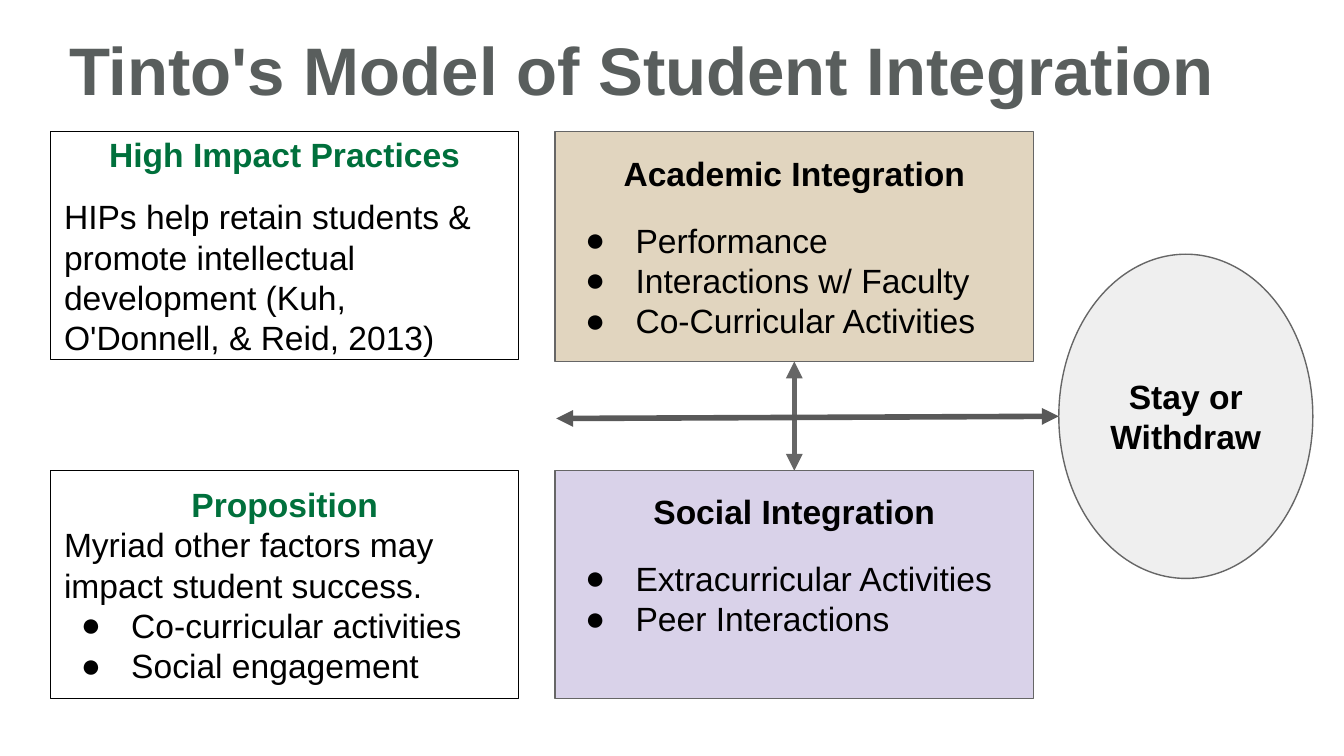
from dataclasses import dataclass
from lxml.etree import SubElement as Sub
from pptx import Presentation
from pptx.dml.color import RGBColor as Rgb
from pptx.enum.shapes import MSO_CONNECTOR as Conn, MSO_SHAPE as Kind
from pptx.enum.text import MSO_ANCHOR as Anchor, PP_ALIGN as Align
from pptx.oxml.ns import qn
from pptx.util import Pt


@dataclass(frozen=True)
class Theme:
    font: str = "Arial"
    head: int = 36
    body: int = 18
    lead: float = 1.2
    inset: float = 7.2
    thin: float = 0.75
    thick: float = 3
    title: str = "595E5D"
    green: str = "00703C"
    ink: str = "000000"
    white: str = "FFFFFF"
    tan: str = "E1D5BF"
    lilac: str = "D9D2E9"
    pale: str = "EFEFEF"
    edge: str = "666666"
    arrow: str = "595959"


T = Theme()


def frame(shape, drop=0):
    """Set wrap, anchor and insets; drop is extra room at the foot."""
    box = shape.text_frame
    box.word_wrap = True
    box.vertical_anchor = Anchor.MIDDLE
    box.margin_left = box.margin_right = box.margin_top = Pt(T.inset)
    box.margin_bottom = Pt(T.inset + drop)
    return box


def write(para, text, color=T.ink, size=T.body, bold=False,
          align=Align.LEFT, gap=0):
    para.alignment = align
    para.line_spacing = Pt(size * T.lead)
    para.space_before = Pt(gap)
    run = para.add_run()
    run.text = text
    font = run.font
    font.name, font.size, font.bold = T.font, Pt(size), bold
    font.color.rgb = Rgb.from_string(color)


def bullet(para):
    props = para._p.get_or_add_pPr()
    props.set("marL", str(Pt(36)))
    props.set("indent", str(Pt(-27)))
    Sub(props, qn("a:buFont"), typeface=T.font)
    Sub(props, qn("a:buChar"), char="●")


def block(slide, kind, box, fill, edge):
    shape = slide.shapes.add_shape(kind, *map(Pt, box))
    shape.shadow.inherit = False
    shape.fill.solid()
    shape.fill.fore_color.rgb = Rgb.from_string(fill)
    shape.line.color.rgb = Rgb.from_string(edge)
    shape.line.width = Pt(T.thin)
    return shape


def title(slide, box, text):
    shape = slide.shapes.add_textbox(*map(Pt, box))
    write(frame(shape).paragraphs[0], text, T.title, T.head, True)


def card(slide, box, fill, edge, head, color, text="", items=(),
         gap=0, drop=0):
    """Headed box with an optional passage and bullet list."""
    body = frame(block(slide, Kind.RECTANGLE, box, fill, edge), drop)
    write(body.paragraphs[0], head, color, bold=True, align=Align.CENTER)
    if text:
        write(body.add_paragraph(), text, gap=gap)
    for i, item in enumerate(items):
        para = body.add_paragraph()
        write(para, item, gap=0 if i or text else gap)
        bullet(para)


def result(slide, box, text):
    shape = block(slide, Kind.OVAL, box, T.pale, T.edge)
    write(frame(shape).paragraphs[0], text, bold=True, align=Align.CENTER)


def arrow(slide, start, end, color):
    link = slide.shapes.add_connector(Conn.STRAIGHT, *map(Pt, start + end))
    link.line.color.rgb = Rgb.from_string(color)
    link.line.width = Pt(T.thick)
    for tip in ("a:headEnd", "a:tailEnd"):
        Sub(link.line._get_or_add_ln(), qn(tip), type="triangle")
    Sub(link._element.spPr, qn("a:effectLst"))


def main():
    deck = Presentation()
    deck.slide_width, deck.slide_height = Pt(720), Pt(405)
    slide = deck.slides.add_slide(deck.slide_layouts[6])

    # Two columns by two rows
    left, right = 27.2, 297.4
    top, low = 70.5, 252.2
    wide, broad, tall = 250.6, 256.3, 122.2

    # Practice and proposition
    card(slide, (left, top, wide, tall), T.white, T.ink,
         "High Impact Practices", T.green,
         "HIPs help retain students & promote intellectual development "
         "(Kuh, O'Donnell, & Reid, 2013)", gap=12)
    card(slide, (left, low, wide, tall), T.white, T.ink,
         "Proposition", T.green,
         "Myriad other factors may impact student success.",
         ("Co-curricular activities", "Social engagement"))

    # Kinds of integration
    card(slide, (right, top, broad, tall + 1), T.tan, T.edge,
         "Academic Integration", T.ink,
         items=("Performance", "Interactions w/ Faculty",
                "Co-Curricular Activities"), gap=14.4)
    card(slide, (right, low, broad, tall), T.lilac, T.edge,
         "Social Integration", T.ink,
         items=("Extracurricular Activities", "Peer Interactions"),
         gap=14.4, drop=T.body * T.lead)

    # Links between the parts
    mid, oval = right + broad / 2, (567.2, 136.2, 136.1, 173.7)
    arrow(slide, (mid, low), (mid, top + tall + 1), T.edge)
    arrow(slide, (298, 224.2), (oval[0], oval[1] + oval[3] / 2), T.arrow)

    # Heading and outcome
    title(slide, (30, 11, 673.2, 52), "Tinto's Model of Student Integration")
    result(slide, oval, "Stay or Withdraw")
    deck.save("out.pptx")


if __name__ == "__main__":
    main()
